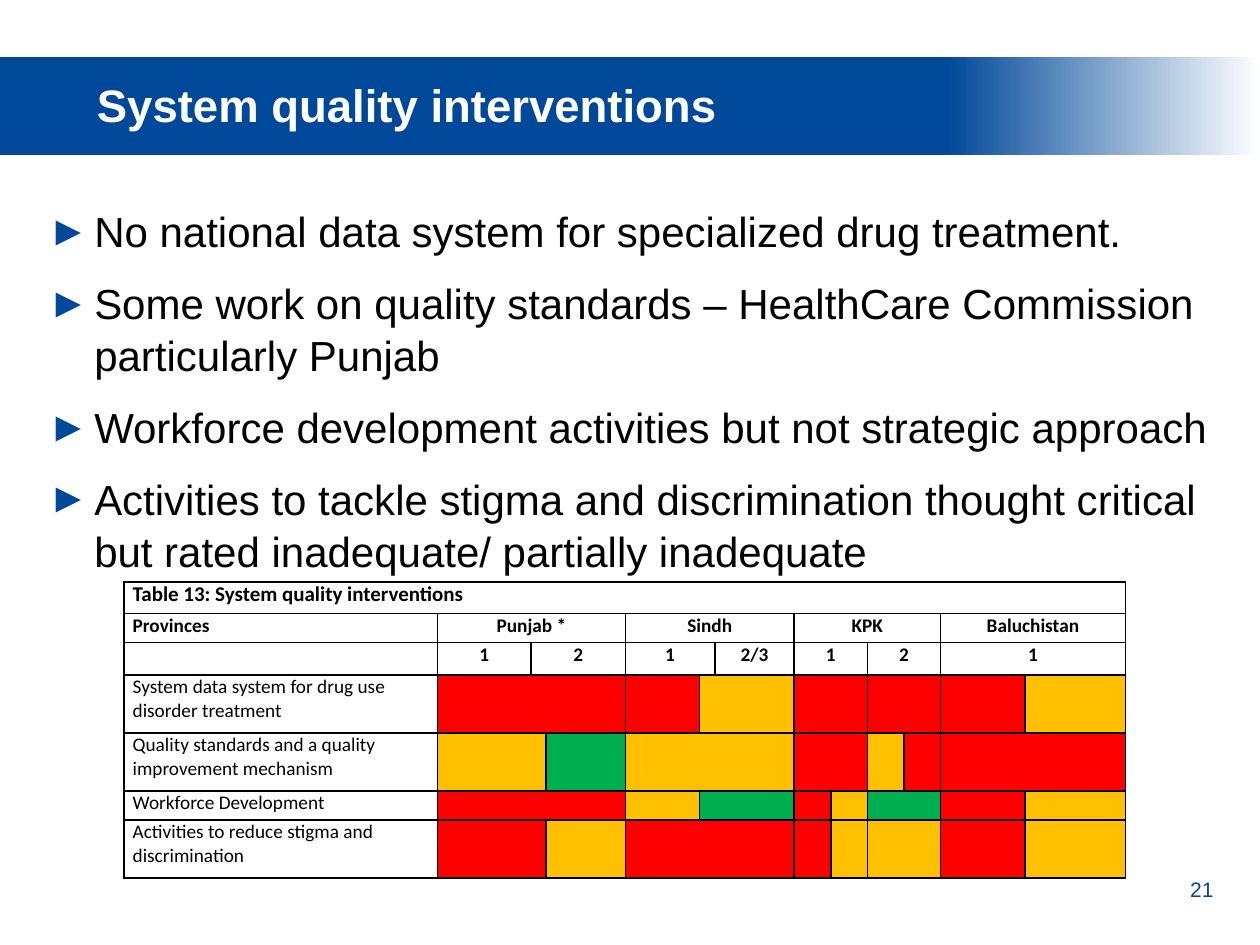
from dataclasses import dataclass
from typing import Any, NamedTuple

from lxml.etree import SubElement
from pptx import Presentation
from pptx.dml.color import RGBColor as RGB
from pptx.enum.shapes import MSO_SHAPE as Preset
from pptx.enum.text import MSO_ANCHOR as Anchor, MSO_AUTO_SIZE as AutoSize, PP_ALIGN as Align
from pptx.oxml import parse_xml
from pptx.oxml.ns import nsdecls, qn
from pptx.util import Pt


@dataclass(frozen=True)
class Theme:
    blue: RGB = RGB(0x00, 0x48, 0x99)
    white: RGB = RGB(0xFF, 0xFF, 0xFF)
    black: RGB = RGB(0, 0, 0)
    red: RGB = RGB(0xFF, 0, 0)
    amber: RGB = RGB(0xFF, 0xC0, 0)
    green: RGB = RGB(0, 0xB0, 0x50)
    text_font: str = "Arial"
    table_font: str = "Calibri"
    title_size: float = 26
    bullet_size: float = 24
    number_size: float = 12
    caption_size: float = 12
    table_size: float = 11


class Box(NamedTuple):
    left: float
    top: float
    width: float
    height: float

    def lengths(self) -> tuple:
        return tuple(Pt(value) for value in self)


class Entry(NamedTuple):
    """A table cell that covers `span` columns."""
    text: str = ""
    span: int = 1
    fill: RGB = Theme.white


THEME = Theme()
BULLETS = [
    "No national data system for specialized drug treatment.",
    "Some work on quality standards – HealthCare Commission particularly Punjab",
    "Workforce development activities but not strategic approach",
    "Activities to tackle stigma and discrimination thought critical "
    "but rated inadequate/ partially inadequate",
]
COLUMN_WIDTHS = [179.3, 53.3, 8.6, 45.4, 42.5, 8.6, 45.4, 20.9, 20.9, 20.9, 20.9, 48.2, 57.6]
ROW_HEIGHTS = [18, 16.6, 18.7, 33.1, 33.1, 16.6, 33.1]
HEADER_ROWS = 3
HEADERS = [
    [Entry("Table 13: System quality interventions", 13)],
    [Entry("Provinces"), Entry("Punjab *", 3), Entry("Sindh", 3), Entry("KPK", 4),
     Entry("Baluchistan", 2)],
    [Entry(), Entry("1"), Entry("2", 2), Entry("1", 2), Entry("2/3"), Entry("1", 2),
     Entry("2", 2), Entry("1", 2)],
]
RATING_FILLS = {"R": THEME.red, "A": THEME.amber, "G": THEME.green}
# Each rating is a colour letter followed by the number of columns it covers.
RATINGS = {
    "System data system for drug use disorder treatment": "R3 R1 A2 R2 R2 R1 A1",
    "Quality standards and a quality improvement mechanism": "A2 G1 A3 R2 A1 R1 R2",
    "Workforce Development": "R3 A1 G2 R1 A1 G2 R1 A1",
    "Activities to reduce stigma and discrimination": "R2 A1 R3 R1 A1 A2 R1 A1",
}


def apply_format(target: Any, values: dict[str, Any]) -> None:
    for name, value in values.items():
        setattr(target, name, value)


def format_font(font: Any, name: str, size: float, color: RGB, bold: bool = False) -> None:
    apply_format(font, {"name": name, "size": Pt(size), "bold": bold})
    font.color.rgb = color


def add_band(slide: Any, box: Box) -> None:
    """Add the fading title band behind every other shape."""
    band = slide.shapes.add_shape(Preset.RECTANGLE, *box.lengths())
    band.shadow.inherit = False
    band.line.fill.background()
    band.fill.gradient()
    band.fill.gradient_angle = 180
    stops = [(0, THEME.white), (0.25, THEME.blue)]
    for stop, (position, color) in zip(band.fill.gradient_stops, stops):
        stop.position = position
        stop.color.rgb = color
    slide.shapes.element.insert(2, band.element)


def format_title(title: Any, text: str, box: Box) -> None:
    apply_format(title, dict(zip(("left", "top", "width", "height"), box.lengths())))
    title.text = text
    apply_format(title.text_frame, {
        "auto_size": AutoSize.NONE, "vertical_anchor": Anchor.TOP, "margin_top": Pt(5.6)})
    paragraph = title.text_frame.paragraphs[0]
    paragraph.alignment = Align.LEFT
    format_font(paragraph.runs[0].font, THEME.text_font, THEME.title_size, THEME.white, True)


def add_bullet_mark(paragraph: Any, hanging: float) -> None:
    properties = paragraph._p.get_or_add_pPr()
    apply_indent = {"marL": Pt(hanging), "indent": -Pt(hanging)}
    for name, value in apply_indent.items():
        properties.set(name, str(value))
    color = SubElement(properties, qn("a:buClr"))
    SubElement(color, qn("a:srgbClr"), val=str(THEME.blue))
    SubElement(properties, qn("a:buFont"), typeface=THEME.text_font)
    SubElement(properties, qn("a:buChar"), char="►")


def add_bullets(slide: Any, texts: list[str], box: Box) -> None:
    frame = slide.shapes.add_textbox(*box.lengths()).text_frame
    apply_format(frame, {"word_wrap": True, "margin_top": Pt(5)})
    for index, text in enumerate(texts):
        paragraph = frame.add_paragraph() if index else frame.paragraphs[0]
        add_bullet_mark(paragraph, 26.6)
        apply_format(paragraph, {
            "line_spacing": 1.04, "space_before": Pt(5 if index else 0), "space_after": Pt(6)})
        run = paragraph.add_run()
        run.text = text
        format_font(run.font, THEME.text_font, THEME.bullet_size, THEME.black)


def add_page_number(slide: Any, number: str, box: Box) -> None:
    frame = slide.shapes.add_textbox(*box.lengths()).text_frame
    paragraph = frame.paragraphs[0]
    paragraph.alignment = Align.RIGHT
    frame.word_wrap = False
    run = paragraph.add_run()
    run.text = number
    format_font(run.font, THEME.text_font, THEME.number_size, THEME.blue)


def add_borders(cell: Any) -> None:
    properties = cell._tc.get_or_add_tcPr()
    for index, side in enumerate("LRTB"):
        properties.insert(index, parse_xml(
            f'<a:ln{side} {nsdecls("a")} w="{Pt(1)}"><a:solidFill>'
            f'<a:srgbClr val="{THEME.black}"/></a:solidFill></a:ln{side}>'))


def fill_cell(cell: Any, entry: Entry, size: float, bold: bool, alignment: Any) -> None:
    apply_format(cell, {"margin_left": Pt(5), "margin_right": Pt(5),
                        "margin_top": 0, "margin_bottom": 0})
    cell.fill.solid()
    cell.fill.fore_color.rgb = entry.fill
    add_borders(cell)
    paragraph = cell.text_frame.paragraphs[0]
    paragraph.alignment = alignment
    if entry.text:
        run = paragraph.add_run()
        run.text = entry.text
        format_font(run.font, THEME.table_font, size, THEME.black, bold)
    else:  # keeps an empty cell from stretching its row
        SubElement(paragraph._p, qn("a:endParaRPr"), sz=str(int(size * 100)))


def add_ratings_table(slide: Any, rows: list[list[Entry]], box: Box) -> None:
    table = slide.shapes.add_table(len(rows), len(COLUMN_WIDTHS), *box.lengths()).table
    apply_format(table, {"first_row": False, "horz_banding": False})
    for column, width in zip(table.columns, COLUMN_WIDTHS):
        column.width = Pt(width)
    for row, height in zip(table.rows, ROW_HEIGHTS):
        row.height = Pt(height)
    for row_index, entries in enumerate(rows):
        size = THEME.table_size if row_index else THEME.caption_size
        start = 0
        for entry in entries:
            end = start + entry.span
            for column in range(start, end):
                shown = entry if column == start else Entry(fill=entry.fill)
                fill_cell(table.cell(row_index, column), shown, size,
                          row_index < HEADER_ROWS, Align.CENTER if column else Align.LEFT)
            if entry.span > 1:
                table.cell(row_index, start).merge(table.cell(row_index, end - 1))
            start = end


def main() -> None:
    presentation = Presentation()
    apply_format(presentation, {"slide_width": Pt(720), "slide_height": Pt(540)})
    slide = presentation.slides.add_slide(presentation.slide_layouts[5])
    add_band(slide, Box(0, 32.4, 720, 56.2))
    format_title(slide.shapes.title, "System quality interventions", Box(48.2, 38.2, 612, 44.6))
    add_bullets(slide, BULLETS, Box(20.2, 111.6, 686.2, 221))
    rating_rows = [
        [Entry(label)] + [Entry("", int(code[1]), RATING_FILLS[code[0]]) for code in codes.split()]
        for label, codes in RATINGS.items()]
    add_ratings_table(slide, HEADERS + rating_rows,
                      Box(70.8, 332.6, sum(COLUMN_WIDTHS), sum(ROW_HEIGHTS)))
    add_page_number(slide, "21", Box(671, 497.5, 29.5, 21.6))
    presentation.save("out.pptx")


if __name__ == "__main__":
    main()
